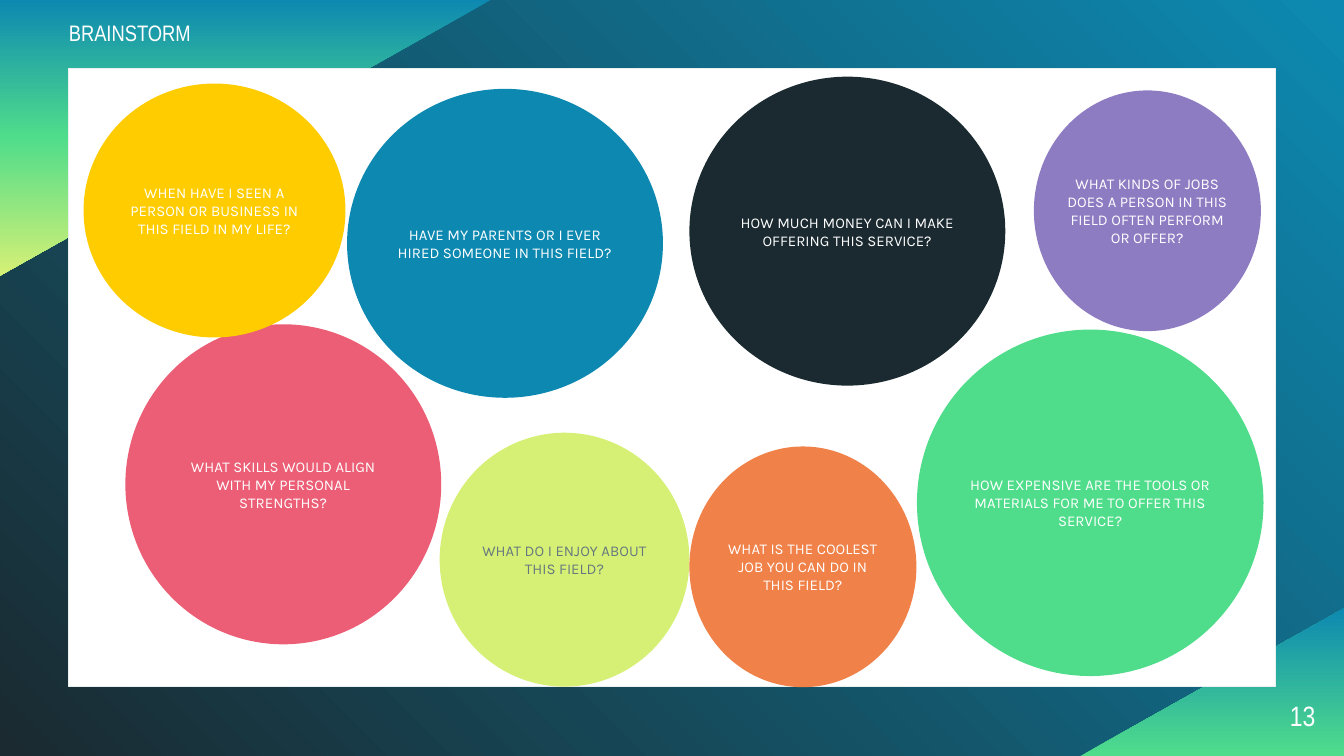
from collections import namedtuple
from dataclasses import dataclass

from lxml.etree import SubElement
from pptx import Presentation
from pptx.dml.color import RGBColor
from pptx.enum.shapes import MSO_SHAPE
from pptx.enum.text import MSO_ANCHOR, MSO_AUTO_SIZE, PP_ALIGN
from pptx.oxml.ns import qn
from pptx.util import Cm, Pt

Box = namedtuple("Box", "left top width height")


@dataclass(frozen=True)
class Theme:
    white: str = "FFFFFF"
    dark: str = "1A2A30"
    blue: str = "0D89B1"
    green: str = "50DD8B"
    lime: str = "D6F075"
    pink: str = "EB5E76"
    orange: str = "F08148"
    yellow: str = "FFCC00"
    purple: str = "8E7CC3"
    grey: str = "66787E"
    border: str = "E9F0EF"
    heading_font: str = "Arial Narrow"
    bubble_font: str = "Karla"
    title_size: int = 12
    number_size: int = 15
    bubble_size: int = 8


THEME = Theme()
PAGE = Box(0, 0, 25.4, 14.29)
PANEL = Box(1.3, 1.3, 22.81, 11.68)

BUBBLES = [
    (Box(11.73, 0.15, 5.97, 5.84), THEME.dark, THEME.white,
     "HOW MUCH MONEY CAN I MAKE OFFERING THIS SERVICE?"),
    (Box(5.26, 0.38, 5.97, 5.84), THEME.blue, THEME.white,
     "HAVE MY PARENTS OR I EVER HIRED SOMEONE IN THIS FIELD?"),
    (Box(7.01, 6.88, 4.72, 4.8), THEME.lime, THEME.grey,
     "WHAT DO I ENJOY ABOUT THIS FIELD?"),
    (Box(1.07, 4.83, 5.97, 6.05), THEME.pink, THEME.white,
     "WHAT SKILLS WOULD ALIGN WITH MY PERSONAL STRENGTHS?"),
    (Box(11.73, 7.14, 4.29, 4.55), THEME.orange, THEME.white,
     "WHAT IS THE COOLEST JOB YOU CAN DO IN THIS FIELD?"),
    (Box(16.03, 4.93, 6.55, 6.55), THEME.green, THEME.white,
     "HOW EXPENSIVE ARE THE TOOLS OR MATERIALS FOR ME TO OFFER THIS SERVICE?"),
    (Box(0.28, 0.28, 4.95, 4.8), THEME.yellow, THEME.white,
     "WHEN HAVE I SEEN A PERSON OR BUSINESS IN THIS FIELD IN MY LIFE?"),
    (Box(18.24, 0.41, 4.29, 4.55), THEME.purple, THEME.white,
     "WHAT KINDS OF JOBS DOES A PERSON IN THIS FIELD OFTEN PERFORM OR OFFER?"),
]


def lengths(box):
    return [Cm(value) for value in box]


def write(shape, text, *, size, font, color=THEME.white,
          align=PP_ALIGN.LEFT, line_spacing=None):
    frame = shape.text_frame
    frame.auto_size = MSO_AUTO_SIZE.NONE
    frame.word_wrap = True
    frame.vertical_anchor = MSO_ANCHOR.MIDDLE
    frame.margin_left = frame.margin_right = 0
    frame.margin_top = frame.margin_bottom = 0
    para = frame.paragraphs[0]
    para.alignment = align
    para.line_spacing = line_spacing
    span = para.add_run()
    span.text = text
    span.font.size = Pt(size)
    span.font.name = font
    span.font.color.rgb = RGBColor.from_string(color)


def set_gradient(fill, parent, colors):
    fill.gradient()
    gradient = next(parent.iter(qn("a:gradFill")))
    stops = gradient.find(qn("a:gsLst"))
    stops.clear()
    for index, color in enumerate(colors):
        position = index * 100000 // (len(colors) - 1)
        stop = SubElement(stops, qn("a:gs"), pos=str(position))
        SubElement(stop, qn("a:srgbClr"), val=color)
    return gradient


def add_filled_shape(page, kind, box, color=None):
    shape = page.shapes.add_shape(kind, *lengths(box))
    shape.shadow.inherit = False
    shape.line.fill.background()
    if color:
        shape.fill.solid()
        shape.fill.fore_color.rgb = RGBColor.from_string(color)
    return shape


def add_backdrop(page):
    gradient = set_gradient(page.background.fill, page.element,
                            [THEME.blue, THEME.dark])
    gradient.remove(gradient.find(qn("a:lin")))
    circle = SubElement(gradient, qn("a:path"), path="circle")
    SubElement(circle, qn("a:fillToRect"), l="100000", b="100000")


def add_corner(page, box, rotation, colors):
    middle_x = box.left + box.width / 2
    middle_y = box.top + box.height / 2
    upright = Box(middle_x - box.height / 2, middle_y - box.width / 2,
                  box.height, box.width)
    corner = add_filled_shape(page, MSO_SHAPE.RIGHT_TRIANGLE, upright)
    corner.rotation = rotation
    set_gradient(corner.fill, corner.element, colors)
    corner.fill.gradient_angle = 0


def add_title(page, box):
    title = page.shapes.title
    title.left, title.top, title.width, title.height = lengths(box)
    write(title, "BRAINSTORM", size=THEME.title_size,
          font=THEME.heading_font, line_spacing=0.9)
    title.element.getparent().append(title.element)


def add_page_number(page, box):
    number = page.shapes.add_textbox(*lengths(box))
    write(number, "13", size=THEME.number_size, font=THEME.heading_font,
          align=PP_ALIGN.RIGHT)


def add_bubble_panel(page, box):
    panel = add_filled_shape(page, MSO_SHAPE.RECTANGLE, box, THEME.white)
    panel.line.color.rgb = RGBColor.from_string(THEME.border)
    panel.line.width = Pt(0.75)
    for place, color, text_color, question in BUBBLES:
        spot = place._replace(left=box.left + place.left,
                              top=box.top + place.top)
        bubble = add_filled_shape(page, MSO_SHAPE.OVAL, spot, color)
        write(bubble, question, size=THEME.bubble_size,
              font=THEME.bubble_font, color=text_color,
              align=PP_ALIGN.CENTER)


def main():
    deck = Presentation()
    deck.slide_width, deck.slide_height = Cm(PAGE.width), Cm(PAGE.height)
    page = deck.slides.add_slide(deck.slide_layouts[5])
    add_backdrop(page)
    add_corner(page, Box(0, 0, 9.27, 5.21), 90,
               [THEME.blue, THEME.green, THEME.lime])
    add_corner(page, Box(PAGE.width - 4.98, PAGE.height - 2.79, 4.98, 2.79),
               270, [THEME.green, THEME.blue])
    add_title(page, Box(PANEL.left, 0, PANEL.width, PANEL.top))
    add_bubble_panel(page, PANEL)
    add_page_number(page, Box(23.34, PANEL.top + PANEL.height, 1.52, 1.09))
    deck.save("out.pptx")


if __name__ == "__main__":
    main()
